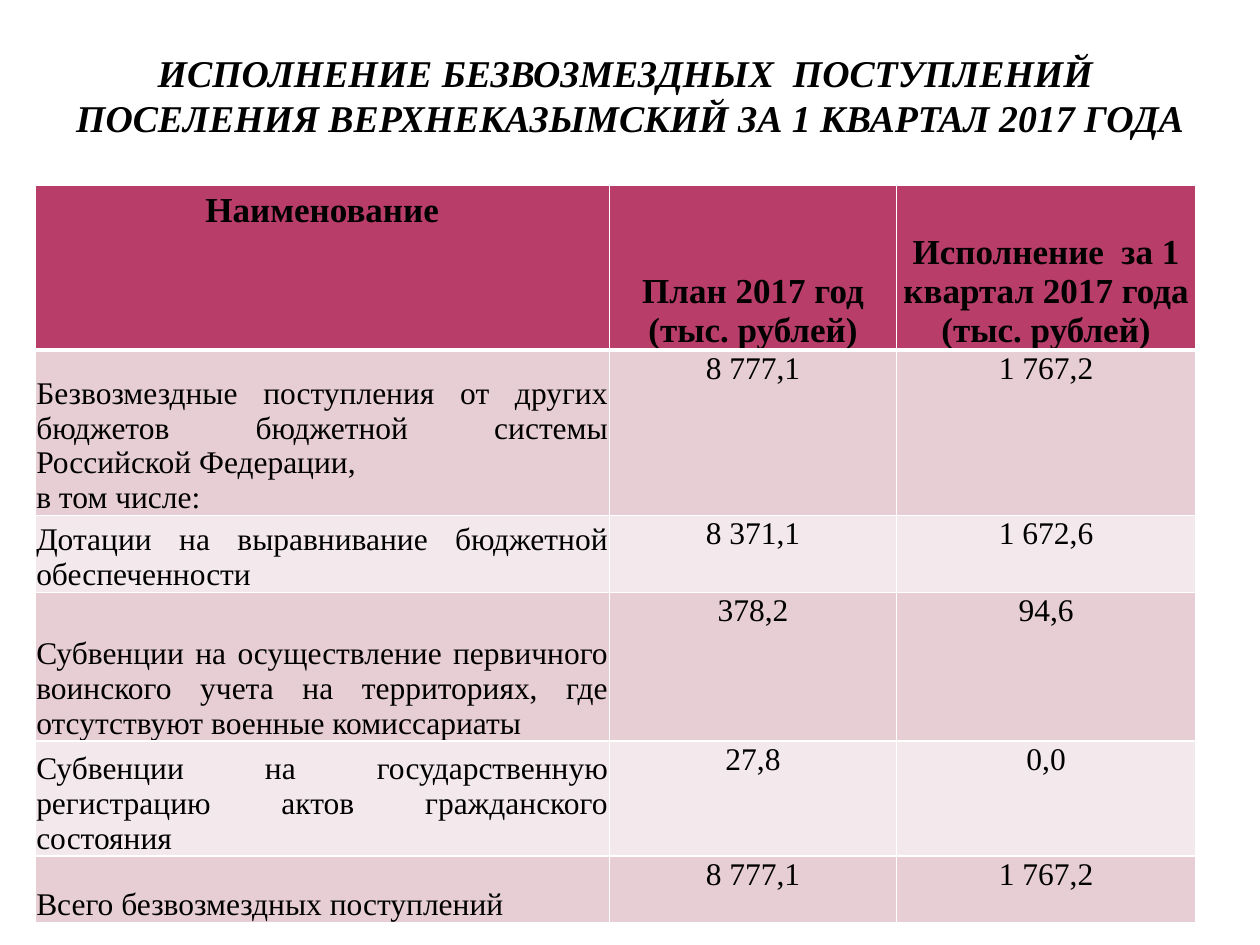
import pptx
import pptx.util
import pptx.dml.color
import pptx.enum.text
from lxml import etree

Pt = pptx.util.Pt
RGBColor = pptx.dml.color.RGBColor
ALIGN = pptx.enum.text.PP_ALIGN
ANCHOR = pptx.enum.text.MSO_ANCHOR

TITLE = "ИСПОЛНЕНИЕ БЕЗВОЗМЕЗДНЫХ  ПОСТУПЛЕНИЙ  ПОСЕЛЕНИЯ ВЕРХНЕКАЗЫМСКИЙ ЗА 1 КВАРТАЛ 2017 ГОДА"
ROWS = [
    ("Наименование",
     "План 2017 год\n(тыс. рублей)",
     "Исполнение  за 1 квартал 2017 года\n(тыс. рублей)"),
    ("Безвозмездные поступления от других бюджетов бюджетной системы Российской Федерации,\nв том числе:",
     "8 777,1", "1 767,2"),
    ("Дотации на выравнивание бюджетной обеспеченности", "8 371,1", "1 672,6"),
    ("Субвенции на осуществление первичного воинского учета на территориях, "
     "где отсутствуют военные комиссариаты", "378,2", "94,6"),
    ("Субвенции на государственную регистрацию актов гражданского состояния", "27,8", "0,0"),
    ("Всего безвозмездных поступлений", "8 777,1", "1 767,2"),
]
COLUMN_WIDTHS = [328.2, 164.2, 170.8]
ROW_HEIGHTS = [94.2, 94.6, 43, 85, 64, 38]
LEFT, TITLE_TOP, TABLE_TOP = 20, 21, 105.8
TITLE_WIDTH = 680.4

FONT = "Times New Roman"
BLACK = RGBColor(0x00, 0x00, 0x00)
WHITE = RGBColor(0xFF, 0xFF, 0xFF)
HEADER_FILL = RGBColor(0xB8, 0x3D, 0x68)
BAND_FILLS = [RGBColor(0xF3, 0xE8, 0xEB), RGBColor(0xE6, 0xCE, 0xD4)]
DRAWING_NS = "http://schemas.openxmlformats.org/drawingml/2006/main"


def set_font(paragraph, size, bold, italic=False):
    for run in paragraph.runs:
        font = run.font
        font.name, font.size, font.bold, font.italic = FONT, Pt(size), bold, italic
        font.color.rgb = BLACK


def set_borders(cell, top, bottom):
    properties = cell._tc.get_or_add_tcPr()
    for side, width in (("lnL", 1), ("lnR", 1), ("lnT", top), ("lnB", bottom)):
        line = etree.SubElement(properties, f"{{{DRAWING_NS}}}{side}", w=str(Pt(width)))
        fill = etree.SubElement(line, f"{{{DRAWING_NS}}}solidFill")
        etree.SubElement(fill, f"{{{DRAWING_NS}}}srgbClr", val=str(WHITE))


def add_title(slide):
    title = slide.shapes.add_textbox(Pt(LEFT), Pt(TITLE_TOP), Pt(TITLE_WIDTH), Pt(TABLE_TOP - TITLE_TOP))
    frame = title.text_frame
    frame.word_wrap = True
    frame.vertical_anchor = ANCHOR.BOTTOM
    frame.margin_left = frame.margin_right = Pt(3.6)
    frame.margin_top, frame.margin_bottom = Pt(0), Pt(25.7)
    frame.text = TITLE
    heading = frame.paragraphs[0]
    heading.alignment = ALIGN.CENTER
    heading.line_spacing = Pt(25.7)
    set_font(heading, 21.6, True, True)


def fill_cell(cell, text, row, column):
    header = row == 0
    set_borders(cell, 3 if row == 1 else 1, 3 if header else 1)
    cell.fill.solid()
    cell.fill.fore_color.rgb = HEADER_FILL if header else BAND_FILLS[row % 2]
    if row or column:
        cell.margin_left = cell.margin_right = cell.margin_top = Pt(0.72)
        cell.margin_bottom = Pt(0)
    at_bottom = header != (column == 0)
    cell.vertical_anchor = ANCHOR.BOTTOM if at_bottom else ANCHOR.TOP
    cell.text_frame.text = text
    for paragraph in cell.text_frame.paragraphs:
        paragraph.alignment = ALIGN.CENTER if header or column else ALIGN.JUSTIFY
        set_font(paragraph, 20 if header else 18, header)


def add_budget_table(slide):
    budget = slide.shapes.add_table(
        len(ROWS), len(COLUMN_WIDTHS), Pt(LEFT), Pt(TABLE_TOP),
        Pt(sum(COLUMN_WIDTHS)), Pt(sum(ROW_HEIGHTS))).table
    for column, width in zip(budget.columns, COLUMN_WIDTHS):
        column.width = Pt(width)
    for row, height in zip(budget.rows, ROW_HEIGHTS):
        row.height = Pt(height)
    for row, texts in enumerate(ROWS):
        for column, text in enumerate(texts):
            fill_cell(budget.cell(row, column), text, row, column)


def main():
    deck = pptx.Presentation()
    deck.slide_width, deck.slide_height = Pt(720), Pt(540)
    slide = deck.slides.add_slide(deck.slide_layouts[6])
    add_title(slide)
    add_budget_table(slide)
    deck.save("out.pptx")


if __name__ == "__main__":
    main()
